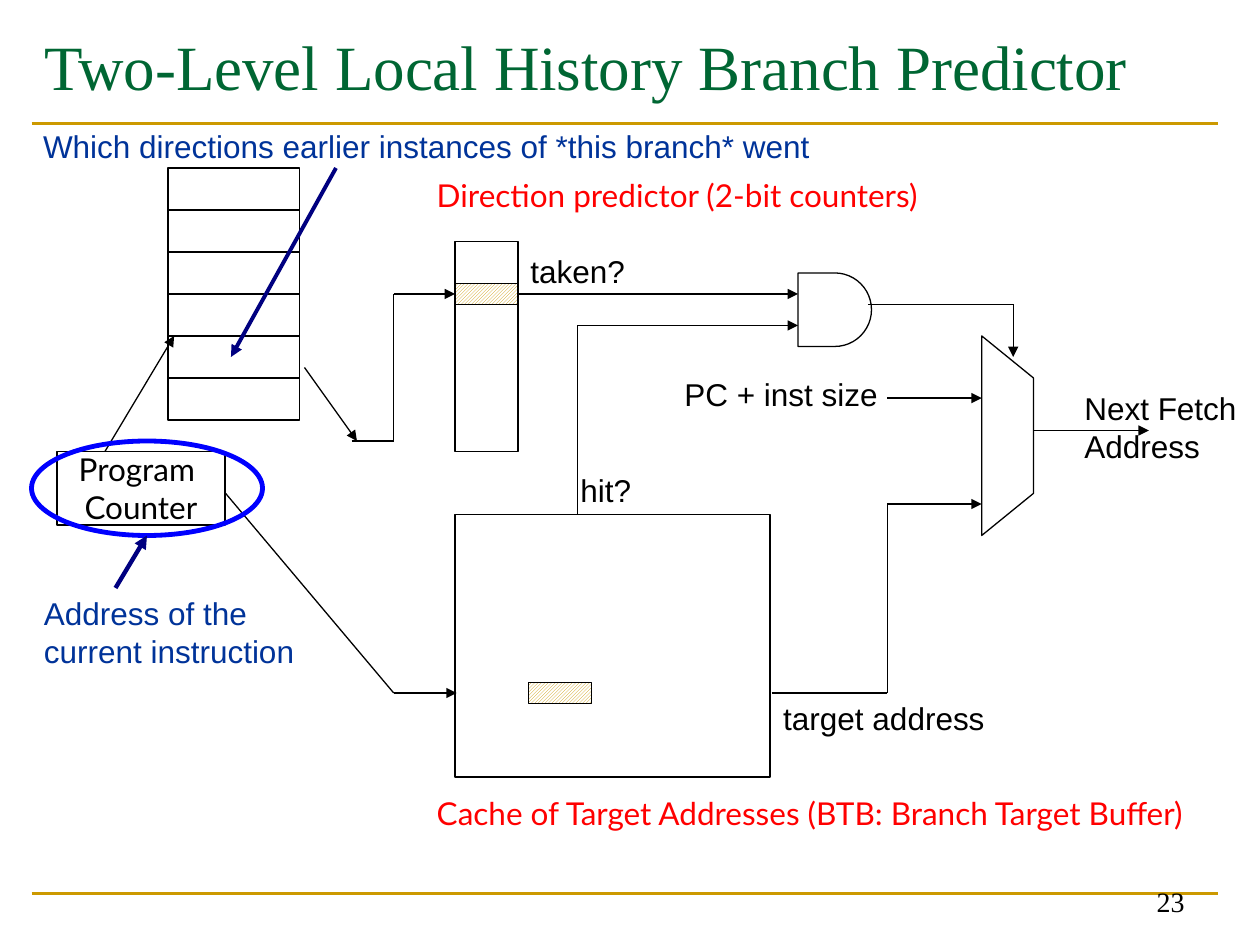
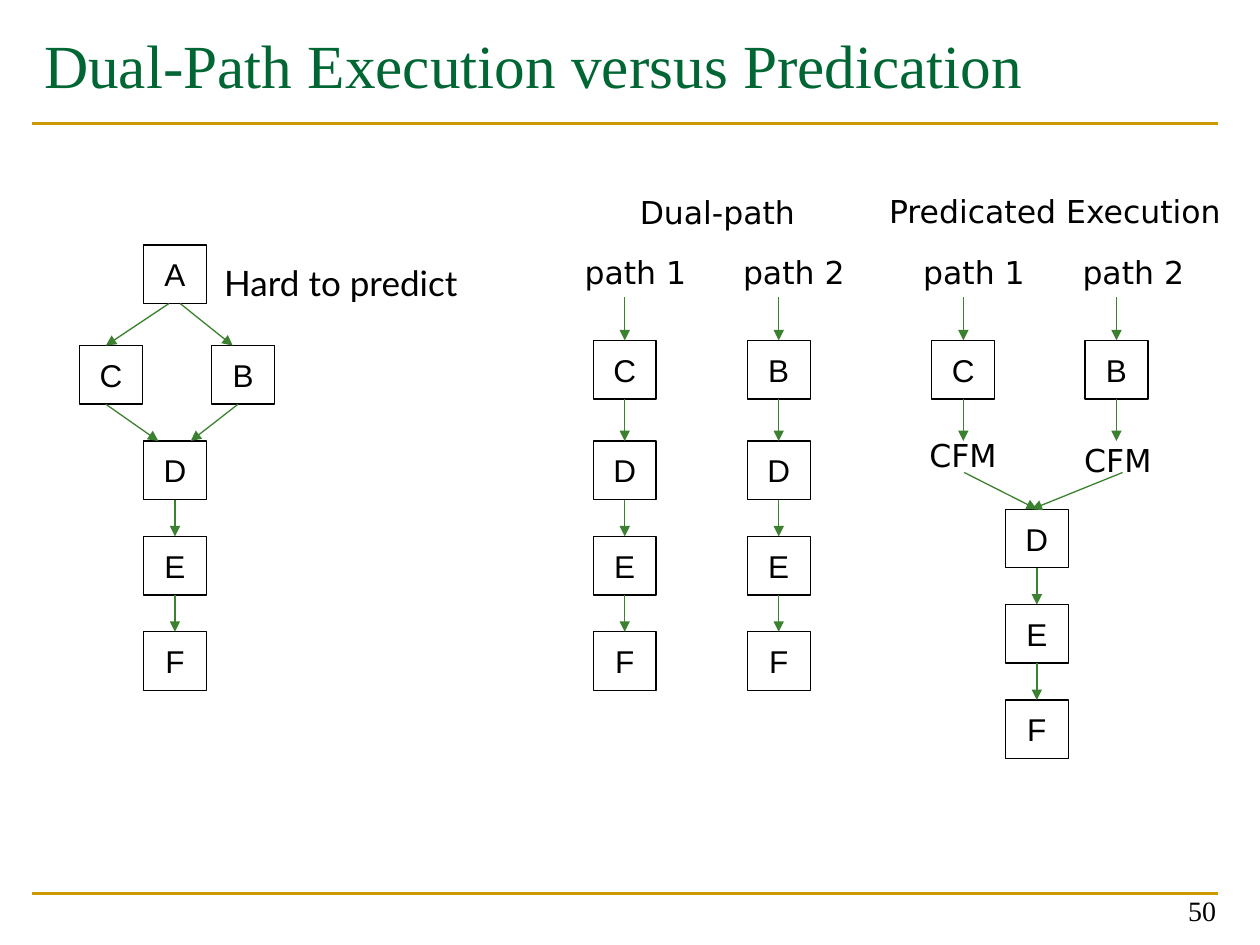
import lxml.etree
import pptx
import pptx.dml.color
import pptx.enum.dml
import pptx.enum.shapes
import pptx.enum.text
import pptx.oxml.ns
import pptx.util
from dataclasses import dataclass

Pt = pptx.util.Pt
SHAPES = pptx.enum.shapes.MSO_SHAPE
ANCHOR = pptx.enum.text.MSO_ANCHOR
ALIGN = pptx.enum.text.PP_ALIGN


@dataclass(frozen=True)
class Theme:
    title: str = "006633"
    rule: str = "CC9900"
    ink: str = "000000"
    paper: str = "FFFFFF"
    note: str = "003399"
    caption: str = "FF0000"
    pointer: str = "000080"
    highlight: str = "0000FF"
    flow: str = "3B812F"
    serif: str = "Times New Roman"
    sans: str = "Arial"
    rounded: str = "Lato"
    wide: str = "DejaVu Sans"
    body_size: float = 18
    remark_size: float = 20
    number_size: float = 16
    thin: float = 0.75
    rule_width: float = 1.5


THEME = Theme()
SLIDE_SIZE = (720, 540)
RULE_SPAN = (18, 696)
RULE_TOPS = (70.5, 510.5)

PREDICTOR = {
    "title": "Two-Level Local History Branch Predictor",
    "title_size": 36, "title_width": 696,
    "number": "23", "number_at": (516, 492, 168, 36),
}
EXECUTION = {
    "title": "Dual-Path Execution versus Predication",
    "title_size": 35, "title_width": 702,
    "number": "50", "number_at": (534, 497.5, 168, 36),
}

PREDICTOR_LABELS = [
    ("target address", (440.5, 396, 130, 29), THEME.sans, THEME.ink),
    ("Direction predictor (2-bit counters)", (242.5, 97, 294, 29), THEME.rounded, THEME.caption),
    ("Cache of Target Addresses (BTB: Branch Target Buffer)", (242.5, 450, 456.5, 29),
     THEME.rounded, THEME.caption),
    ("PC + inst size", (384, 211, 125, 29), THEME.sans, THEME.ink),
    ("taken?", (296, 140.5, 68.5, 29), THEME.sans, THEME.ink),
    ("Next Fetch\nAddress", (612.5, 219, 101.5, 50.5), THEME.sans, THEME.ink),
    ("hit?", (324.5, 265.5, 43, 29), THEME.sans, THEME.ink),
    ("Address of the\ncurrent instruction", (18, 336, 160, 51), THEME.sans, THEME.note),
    ("Which directions earlier instances of *this branch* went", (17.5, 69, 467, 29),
     THEME.sans, THEME.note),
]
COUNTER_TABLE = (260, 138, 36, 120)
COUNTER_ENTRY = (260, 162, 36, 12)
TARGET_CACHE = (260, 294, 180, 150)
TARGET_ENTRY = (302, 390, 36, 12)
PROGRAM_COUNTER = (32.5, 258, 96, 42)
COUNTER_RING = (18, 252, 132, 54)
AND_GATE = (456, 156, 42, 42)
HISTORY_TOP_ROW = (96, 96, 75, 24)
HISTORY_ROWS = 6
MULTIPLEXER = [(561, 192), (590.5, 216), (590.5, 282), (561, 306)]
WIRES = [
    [(174, 210), (204, 252)],
    [(201, 252), (225, 252), (225, 168), (260, 168)],
    [(129, 282), (225, 396), (261, 396)],
    [(441, 396), (507, 396), (507, 288), (561, 288)],
    [(507, 227.5), (561, 227.5)],
    [(590.5, 246), (656.5, 246)],
    [(296, 168), (456, 168)],
    [(496, 174), (579, 174), (579, 204)],
    [(330, 294), (330, 186), (456, 186)],
    [(60, 258), (99.5, 192)],
]
POINTERS = [([(66, 336), (84, 306)], 2.5), ([(192, 96), (132, 204)], 2.25)]

NODE_WIDTH, NODE_HEIGHT, NODE_PITCH = 36, 33.5, 54.5
LANE_TOP, STEM_TOP, PATH_START = 194.5, 252, 170
BRANCH_NODES = [("A", 82, 140), ("C", 45.5, 197.5), ("B", 121, 197.5)]
LANES = [("C", 339), ("B", 427), ("C", 532.5), ("B", 620)]
STEM = "DEF"
STEMS = [(82, STEM_TOP), (339, STEM_TOP), (427, STEM_TOP), (574.5, 291)]
BRANCH_ARROWS = [
    [(96.5, 173.5), (60.5, 197.5)],
    [(103, 173.5), (133, 197.5)],
    [(60.5, 231), (90.5, 252)],
    [(136, 231), (109, 252)],
    [(551, 270), (592.5, 291)],
    [(641.5, 270), (589.5, 291)],
]
EXECUTION_LABELS = [
    ("path 1", (327, 141, 78, 29)),
    ("path 2", (417.5, 141, 79, 29)),
    ("path 1", (520.5, 141, 78, 29)),
    ("path 2", (611.5, 141, 79, 29)),
    ("Dual-path", (358.5, 106.5, 104.5, 29)),
    ("Predicated Execution", (501, 106, 205, 29)),
    ("CFM", (612.5, 248.5, 52.5, 29)),
    ("CFM", (524, 245.5, 52.5, 29)),
]
REMARK = ("Hard to predict", (121, 146, 203, 35))


def rgb(code):
    return pptx.dml.color.RGBColor.from_string(code)


def points(values):
    return [Pt(value) for value in values]


def assign(target, values):
    for name, value in values.items():
        setattr(target, name, value)


def write(holder, text, font, color, size=THEME.body_size, align=ALIGN.LEFT,
          anchor=ANCHOR.TOP, wrap=False):
    frame = holder.text_frame
    frame.text = text
    assign(frame, {"word_wrap": wrap, "vertical_anchor": anchor,
                   "auto_size": pptx.enum.text.MSO_AUTO_SIZE.NONE})
    for paragraph in frame.paragraphs:
        paragraph.alignment = align
        for run in paragraph.runs:
            assign(run.font, {"name": font, "size": Pt(size)})
            run.font.color.rgb = rgb(color)


def label(slide, text, at, font, color, **style):
    write(slide.shapes.add_textbox(*points(at)), text, font, color, **style)


def outline(shape, color=THEME.ink, width=THEME.thin):
    shape.shadow.inherit = False
    shape.fill.background()
    shape.line.color.rgb = rgb(color)
    shape.line.width = Pt(width)
    return shape


def box(slide, at, kind=SHAPES.RECTANGLE, **stroke):
    return outline(slide.shapes.add_shape(kind, *points(at)), **stroke)


def labelled_box(slide, at, text, font):
    shape = box(slide, at)
    write(shape, text, font, THEME.ink, align=ALIGN.CENTER, anchor=ANCHOR.MIDDLE)
    return shape


def hatched_box(slide, at):
    shape = box(slide, at)
    shape.fill.patterned()
    shape.fill.pattern = pptx.enum.dml.MSO_PATTERN.DARK_UPWARD_DIAGONAL
    shape.fill.fore_color.rgb = rgb(THEME.rule)
    shape.fill.back_color.rgb = rgb(THEME.paper)
    return shape


def side_at(point, boxes):
    x, y = points(point)
    for shape in boxes:
        left, top, width, height = shape.left, shape.top, shape.width, shape.height
        middles = [(left + width / 2, top), (left, top + height / 2),
                   (left + width / 2, top + height), (left + width, top + height / 2)]
        for side, (side_x, side_y) in enumerate(middles):
            if max(abs(x - side_x), abs(y - side_y)) < Pt(0.6):
                return shape, side
    return None


def segment(slide, start, end, color, width, arrow, boxes):
    line = slide.shapes.add_connector(
        pptx.enum.shapes.MSO_CONNECTOR.STRAIGHT, *points(start + end))
    line.line.color.rgb = rgb(color)
    line.line.width = Pt(width)
    if arrow:
        tail = lxml.etree.SubElement(line.line._get_or_add_ln(), pptx.oxml.ns.qn("a:tailEnd"))
        tail.set("type", "triangle")
    lxml.etree.SubElement(line._element.spPr, pptx.oxml.ns.qn("a:effectLst"))
    for point, connect in ((start, line.begin_connect), (end, line.end_connect)):
        joint = side_at(point, boxes)
        if joint:
            connect(*joint)


def wire(slide, stops, color=THEME.ink, width=THEME.thin, arrow=True, boxes=()):
    last = len(stops) - 2
    for index, (start, end) in enumerate(zip(stops, stops[1:])):
        segment(slide, start, end, color, width, arrow and index == last, boxes)


def start_slide(deck, content):
    slide = deck.slides.add_slide(deck.slide_layouts[5])
    for top in RULE_TOPS:
        wire(slide, [(RULE_SPAN[0], top), (RULE_SPAN[1], top)],
             THEME.rule, THEME.rule_width, arrow=False)
    title = slide.shapes.title
    place = points((18, 12, content["title_width"], 84))
    assign(title, dict(zip(("left", "top", "width", "height"), place)))
    write(title, content["title"], THEME.serif, THEME.title,
          size=content["title_size"], wrap=True)
    label(slide, content["number"], content["number_at"], THEME.serif, THEME.ink,
          size=THEME.number_size, align=ALIGN.RIGHT, anchor=ANCHOR.BOTTOM, wrap=True)
    return slide


def build_predictor(deck):
    slide = start_slide(deck, PREDICTOR)
    box(slide, COUNTER_TABLE)
    counter_entry = hatched_box(slide, COUNTER_ENTRY)
    box(slide, TARGET_CACHE)
    hatched_box(slide, TARGET_ENTRY)
    labelled_box(slide, PROGRAM_COUNTER, "Program \nCounter", THEME.rounded)
    left, top, width, height = HISTORY_TOP_ROW
    for row in range(HISTORY_ROWS):
        box(slide, (left, top + row * height, width, height))
    box(slide, AND_GATE, SHAPES.FLOWCHART_DELAY)
    corners = [points(corner) for corner in MULTIPLEXER]
    multiplexer = slide.shapes.build_freeform(*corners[0])
    multiplexer.add_line_segments(corners[1:], close=True)
    outline(multiplexer.convert_to_shape())
    for stops in WIRES:
        wire(slide, stops, boxes=[counter_entry])
    for text, at, font, color in PREDICTOR_LABELS:
        label(slide, text, at, font, color)
    box(slide, COUNTER_RING, SHAPES.OVAL, color=THEME.highlight, width=2.75)
    for stops, width in POINTERS:
        wire(slide, stops, THEME.pointer, width)


def build_execution(deck):
    slide = start_slide(deck, EXECUTION)
    nodes = BRANCH_NODES + [(name, left, LANE_TOP) for name, left in LANES]
    arrows = list(BRANCH_ARROWS)
    for _, left in LANES:
        center = left + NODE_WIDTH / 2
        arrows += [[(center, PATH_START), (center, LANE_TOP)],
                   [(center, LANE_TOP + NODE_HEIGHT), (center, STEM_TOP)]]
    for left, top in STEMS:
        center = left + NODE_WIDTH / 2
        for step, name in enumerate(STEM):
            node_top = top + step * NODE_PITCH
            nodes.append((name, left, node_top))
            if step:
                arrows.append([(center, node_top - NODE_PITCH + NODE_HEIGHT), (center, node_top)])
    boxes = [labelled_box(slide, (left, top, NODE_WIDTH, NODE_HEIGHT), name, THEME.sans)
             for name, left, top in nodes]
    for text, at in EXECUTION_LABELS:
        label(slide, text, at, THEME.wide, THEME.ink)
    label(slide, *REMARK, THEME.rounded, THEME.ink, size=THEME.remark_size, wrap=True)
    for stops in arrows:
        wire(slide, stops, THEME.flow, boxes=boxes)


def main():
    deck = pptx.Presentation()
    deck.slide_width, deck.slide_height = points(SLIDE_SIZE)
    build_predictor(deck)
    build_execution(deck)
    deck.save("out.pptx")


if __name__ == "__main__":
    main()
